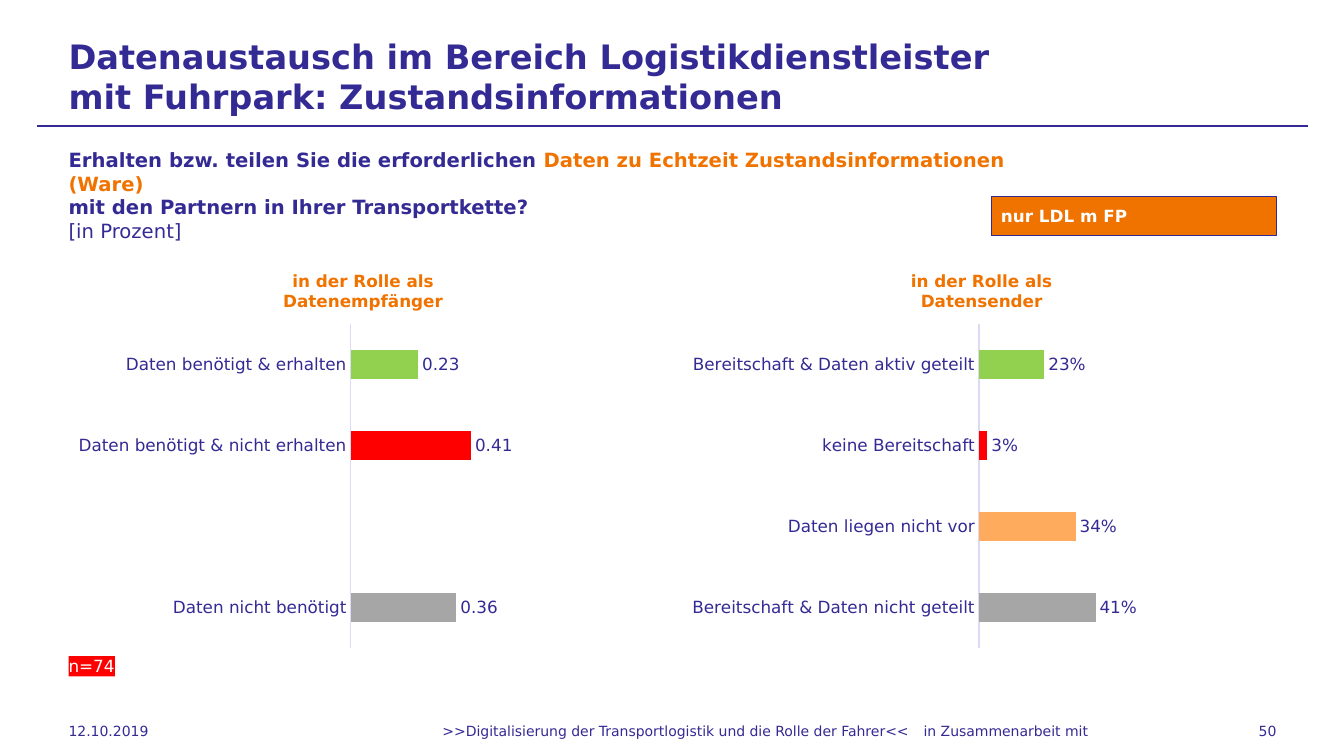
from lxml import etree
from pptx import Presentation
from pptx.chart.data import CategoryChartData
from pptx.dml.color import RGBColor
from pptx.enum.chart import XL_CHART_TYPE, XL_LABEL_POSITION, XL_TICK_MARK
from pptx.enum.shapes import MSO_CONNECTOR, MSO_SHAPE
from pptx.enum.text import MSO_ANCHOR, PP_ALIGN
from pptx.oxml.ns import qn
from pptx.util import Inches, Pt

BAR = XL_CHART_TYPE.BAR_CLUSTERED
OUTSIDE = XL_LABEL_POSITION.OUTSIDE_END
NO_TICKS = XL_TICK_MARK.NONE
STRAIGHT = MSO_CONNECTOR.STRAIGHT
RECT = MSO_SHAPE.RECTANGLE
TOP, MIDDLE = MSO_ANCHOR.TOP, MSO_ANCHOR.MIDDLE
LEFT, CENTER, RIGHT = PP_ALIGN.LEFT, PP_ALIGN.CENTER, PP_ALIGN.RIGHT

INDIGO = RGBColor(0x34, 0x2A, 0x94)
LAVENDER = RGBColor(0xDC, 0xDA, 0xF4)
ORANGE = RGBColor(0xF0, 0x73, 0x00)
LIGHT_ORANGE = RGBColor(0xFF, 0xAB, 0x5D)
RED = RGBColor(0xFF, 0x00, 0x00)
GREEN = RGBColor(0x92, 0xD0, 0x50)
GREY = RGBColor(0xA6, 0xA6, 0xA6)
WHITE = RGBColor(0xFF, 0xFF, 0xFF)


class SlideBuilder:
    font_name = "DejaVu Sans"

    def __init__(self, slide):
        self.slide = slide

    def style(self, font, size, color=INDIGO, bold=False):
        font.name = self.font_name
        font.size = Pt(size)
        font.bold = bold
        font.color.rgb = color

    def set_lines(self, frame, lines, size, align=LEFT, anchor=TOP,
                  inset=0.0, wrap=True):
        """Each line is a list of (text, colour, bold) runs."""
        frame.word_wrap = wrap
        frame.vertical_anchor = anchor
        frame.margin_left = frame.margin_right = Inches(inset)
        frame.margin_top = frame.margin_bottom = Inches(inset / 2)
        paragraph = frame.paragraphs[0]
        paragraph.alignment = align
        for index, line in enumerate(lines):
            if index:
                paragraph.add_line_break()
            for text, color, bold in line:
                run = paragraph.add_run()
                run.text = text
                self.style(run.font, size, color, bold)

    def text(self, box, lines, size, **options):
        textbox = self.slide.shapes.add_textbox(*map(Inches, box))
        self.set_lines(textbox.text_frame, lines, size, **options)

    def tag(self, box, fill, lines, size, outline=None, **options):
        tag = self.slide.shapes.add_shape(RECT, *map(Inches, box))
        tag.shadow.inherit = False
        tag.fill.solid()
        tag.fill.fore_color.rgb = fill
        if outline is None:
            tag.line.fill.background()
        else:
            tag.line.color.rgb = outline
            tag.line.width = Pt(0.75)
        self.set_lines(tag.text_frame, lines, size, **options)

    def rule(self, x1, x2, y):
        rule = self.slide.shapes.add_connector(
            STRAIGHT, Inches(x1), Inches(y), Inches(x2), Inches(y))
        rule.line.color.rgb = INDIGO
        rule.line.width = Pt(0.75)
        etree.SubElement(rule.element.spPr, qn("a:effectLst"))

    def place(self, element, index, **fractions):
        """Set a manual layout, as fractions of the chart area."""
        for old in element.findall(qn("c:layout")):
            element.remove(old)
        layout = etree.Element(qn("c:layout"))
        manual = etree.SubElement(layout, qn("c:manualLayout"))
        if "w" in fractions:
            etree.SubElement(manual, qn("c:layoutTarget")).set("val", "inner")
        for axis in "xy":
            etree.SubElement(manual, qn(f"c:{axis}Mode")).set("val", "edge")
        for key, value in fractions.items():
            etree.SubElement(manual, qn(f"c:{key}")).set("val", str(value))
        element.insert(index, layout)

    def bar_chart(self, box, role, bars, number_format, title_x, plot_x, plot_w):
        """Bars are (category, value, colour), from bottom to top."""
        data = CategoryChartData()
        data.categories = [category for category, _, _ in bars]
        data.add_series("Series 1", [value for _, value, _ in bars])
        chart = self.slide.shapes.add_chart(BAR, *map(Inches, box), data).chart
        self.style(chart.font, 10)
        chart.has_legend = False

        # Chart title
        chart.has_title = True
        frame = chart.chart_title.text_frame
        for paragraph, line in ((frame.paragraphs[0], "in der Rolle als"),
                                (frame.add_paragraph(), role)):
            run = paragraph.add_run()
            run.text = line
            self.style(run.font, 12, ORANGE, True)
        self.place(chart.chart_title.element, 1, x=title_x, y=0.04)
        plot_area = chart.element.find(".//" + qn("c:plotArea"))
        self.place(plot_area, 0, x=plot_x, y=0.18, w=plot_w, h=0.8)

        # Axes
        categories, values = chart.category_axis, chart.value_axis
        categories.major_tick_mark = categories.minor_tick_mark = NO_TICKS
        categories.format.line.color.rgb = LAVENDER
        categories.format.line.width = Pt(0.75)
        self.style(categories.tick_labels.font, 12)
        values.minimum_scale, values.maximum_scale = 0, 1
        values.has_major_gridlines = False
        values.visible = False

        # Bars and their labels
        plot = chart.plots[0]
        plot.gap_width = 182
        plot.vary_by_categories = False
        series = plot.series[0]
        for index, (_, value, color) in enumerate(bars):
            if value is not None:
                fill = series.points[index].format.fill
                fill.solid()
                fill.fore_color.rgb = color
        labels = series.data_labels
        labels.show_value = True
        labels.position = OUTSIDE
        labels.number_format = number_format
        labels.number_format_is_linked = False
        self.style(labels.font, 12)


def main():
    prs = Presentation()
    prs.slide_width, prs.slide_height = Inches(13.33), Inches(7.5)
    page = SlideBuilder(prs.slides.add_slide(prs.slide_layouts[6]))

    # Heading and question
    page.rule(0.37, 12.97, 1.25)
    page.text((0.68, 0.6, 9.45, 0.31), [[(
        "Datenaustausch im Bereich Logistikdienstleister "
        "mit Fuhrpark: Zustandsinformationen", INDIGO, True)]], 24, anchor=MIDDLE)
    page.text((0.68, 1.47, 10, 0.71), [
        [("Erhalten bzw. teilen Sie die erforderlichen ", INDIGO, True),
         ("Daten zu Echtzeit Zustandsinformationen (Ware)", ORANGE, True)],
        [("mit den Partnern in Ihrer Transportkette?", INDIGO, True)],
        [("[in Prozent]", INDIGO, False)]], 14)

    # Receiver and sender charts
    page.bar_chart((0.68, 2.49, 5.83, 4.02), "Datenempfänger", [
        ("Daten nicht benötigt", 0.36, GREY),
        ("", None, None),
        ("Daten benötigt & nicht erhalten", 0.41, RED),
        ("Daten benötigt & erhalten", 0.23, GREEN)], "General", 0.36, 0.48, 0.5)
    page.bar_chart((6.77, 2.49, 5.88, 4.02), "Datensender", [
        ("Bereitschaft & Daten nicht geteilt", 0.41, GREY),
        ("Daten liegen nicht vor", 0.34, LIGHT_ORANGE),
        ("keine Bereitschaft", 0.03, RED),
        ("Bereitschaft & Daten aktiv geteilt", 0.23, GREEN)], "0%", 0.38, 0.5, 0.48)

    # Sample tags
    page.tag((9.83, 1.95, 2.83, 0.39), ORANGE, [[("nur LDL m FP", WHITE, True)]],
             12, outline=INDIGO, anchor=MIDDLE, inset=0.1)
    page.tag((0.68, 6.51, 0.46, 0.2), RED, [[("n=74", WHITE, False)]], 12, wrap=False)

    # Footer
    for left, width, words, align in (
            (0.68, 1.57, "12.10.2019", LEFT),
            (2.41, 8.58, ">>Digitalisierung der Transportlogistik "
                         "und die Rolle der Fahrer<<", CENTER),
            (8.4, 2.39, "in Zusammenarbeit mit", RIGHT),
            (11.16, 1.5, "50", RIGHT)):
        page.text((left, 7.05, width, 0.4), [[(words, INDIGO, False)]], 10,
                  align=align, anchor=MIDDLE)

    prs.save("out.pptx")


if __name__ == "__main__":
    main()
